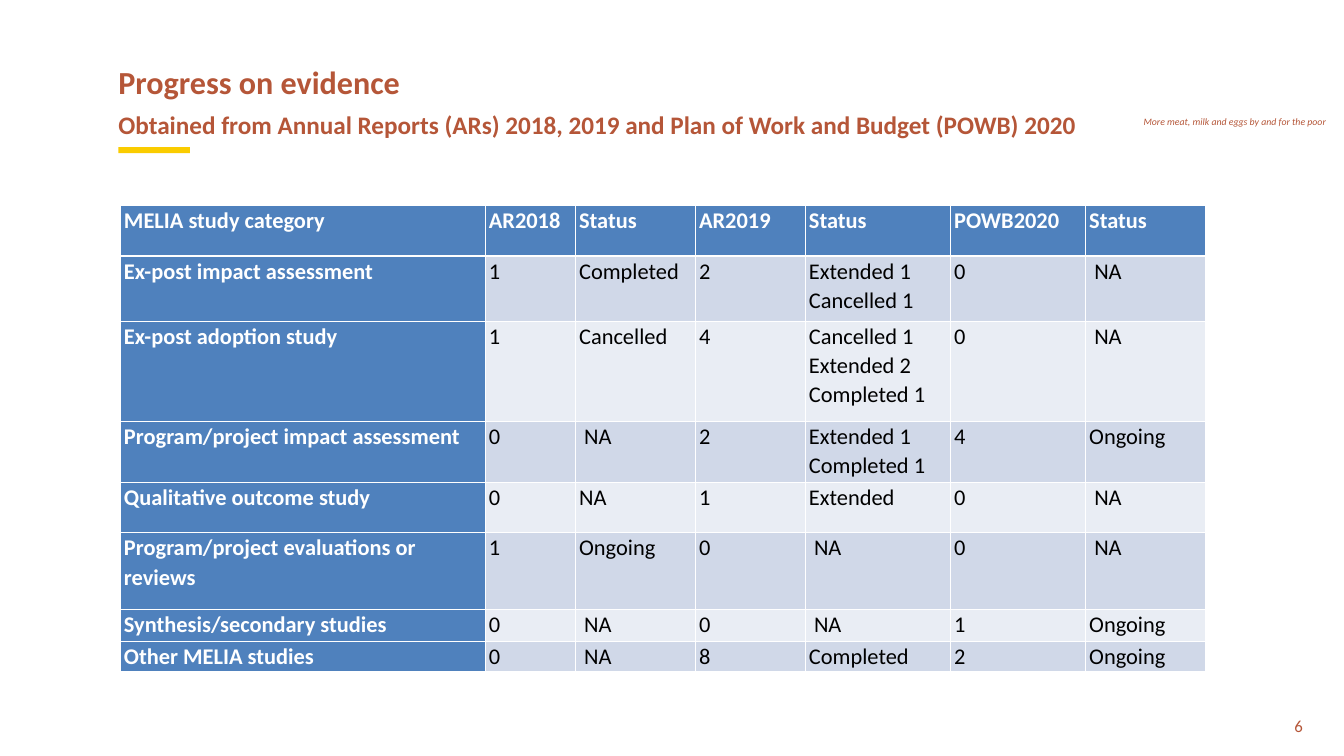
from lxml import etree
from pptx import Presentation
from pptx.dml.color import RGBColor
from pptx.enum.shapes import MSO_SHAPE
from pptx.enum.text import PP_ALIGN
from pptx.oxml.ns import qn
from pptx.util import Pt

RECTANGLE = MSO_SHAPE.RECTANGLE
LEFT, RIGHT = PP_ALIGN.LEFT, PP_ALIGN.RIGHT

THEME = {
    "font": "Calibri",
    "rust": "B55638", "yellow": "FACC00", "blue": "4F81BD",
    "white": "FFFFFF", "black": "000000",
    "bands": ("D0D8E8", "E9EDF4"),
    "title": 45.9, "subtitle": 36, "table": 32, "number": 24, "tagline": 14,
}

# text, (left, top, width, height), size, font style, alignment, line spacing, wrap
TEXTS = [
    ("6", (1818, 1019.5, 50.4, 36), "number", {}, RIGHT, 1, True),
    ("More meat, milk and eggs by and for the poor",
     (1626.5, 162, 277.2, 24.5), "tagline", {"italic": True}, LEFT, 1, False),
    ("Progress on evidence",
     (162, 95.8, 424, 69.8), "title", {"bold": True}, LEFT, 0.8, True),
    ("Obtained from Annual Reports (ARs) 2018, 2019 and Plan of Work and Budget (POWB) 2020",
     (162, 152.6, 1418.4, 51.1), "subtitle", {"bold": True}, LEFT, 1, False),
]
ACCENT_BAR = (169.2, 210.2, 102.2, 8.6)

TABLE_ORIGIN = (172.1, 293.8)
COLUMN_WIDTHS = [521.3, 128.9, 171.4, 157, 207.4, 193, 171.4]
ROW_HEIGHTS = [72, 92.9, 142.6, 87.8, 72, 108.7, 46.1, 43.2]
STUDIES = [
    ["MELIA study category", "AR2018", "Status", "AR2019", "Status", "POWB2020", "Status"],
    ["Ex-post impact assessment", "1", "Completed", "2",
     "Extended 1\nCancelled 1", "0", " NA"],
    ["Ex-post adoption study", "1", "Cancelled", "4",
     "Cancelled 1\nExtended 2\nCompleted 1", "0", " NA"],
    ["Program/project impact assessment", "0", " NA", "2",
     "Extended 1\nCompleted 1", "4", "Ongoing"],
    ["Qualitative outcome study", "0", "NA ", "1", "Extended", "0", " NA"],
    ["Program/project evaluations or reviews", "1", "Ongoing", "0", " NA", "0", " NA"],
    ["Synthesis/secondary studies", "0", " NA", "0", " NA", "1", "Ongoing"],
    ["Other MELIA studies", "0", " NA", "8", "Completed", "2", "Ongoing"],
]
CELL_MARGINS = {"margin_left": Pt(5), "margin_right": Pt(5),
                "margin_top": Pt(0), "margin_bottom": Pt(0)}


def points(values):
    return [Pt(value) for value in values]


def paint(target, color):
    target.fill.solid()
    target.fill.fore_color.rgb = RGBColor.from_string(color)


def write(frame, text, size, color, style, align=LEFT, spacing=1.0):
    """Fill a text frame, one paragraph for each line of text."""
    frame.text = text
    font_format = {"name": THEME["font"], "size": Pt(THEME[size]), **style}
    for para in frame.paragraphs:
        para.alignment = align
        para.line_spacing = spacing
        for span in para.runs:
            for name, value in font_format.items():
                setattr(span.font, name, value)
            span.font.color.rgb = RGBColor.from_string(color)


def set_borders(cell, widths):
    """Put white lines on the left, right, top and bottom, ahead of the fill."""
    properties = cell._tc.get_or_add_tcPr()
    for index, (side, width) in enumerate(widths.items()):
        line = etree.Element(qn(f"a:ln{side}"), w=str(Pt(width)))
        fill = etree.SubElement(line, qn("a:solidFill"))
        etree.SubElement(fill, qn("a:srgbClr"), val=THEME["white"])
        properties.insert(index, line)


def add_texts(page):
    for text, place, size, style, align, spacing, wrap in TEXTS:
        box = page.shapes.add_textbox(*points(place))
        box.text_frame.word_wrap = wrap
        write(box.text_frame, text, size, THEME["rust"], style, align, spacing)


def add_accent_bar(page):
    bar = page.shapes.add_shape(RECTANGLE, *points(ACCENT_BAR))
    bar.shadow.inherit = False
    paint(bar, THEME["yellow"])
    bar.line.fill.background()


def add_study_table(page):
    size = (sum(COLUMN_WIDTHS), sum(ROW_HEIGHTS))
    table = page.shapes.add_table(len(ROW_HEIGHTS), len(COLUMN_WIDTHS),
                                  *points(TABLE_ORIGIN + size)).table
    table.first_col = True
    for column, width in zip(table.columns, COLUMN_WIDTHS):
        column.width = Pt(width)
    for row, height in zip(table.rows, ROW_HEIGHTS):
        row.height = Pt(height)

    for r, study in enumerate(STUDIES):
        for c, text in enumerate(study):
            cell = table.cell(r, c)
            heading = r == 0 or c == 0
            for name, value in CELL_MARGINS.items():
                setattr(cell, name, value)
            paint(cell, THEME["blue"] if heading else THEME["bands"][(r - 1) % 2])
            set_borders(cell, {"L": 1, "R": 1, "T": 3 if r == 1 else 1,
                               "B": 3 if r == 0 else 1})
            write(cell.text_frame, text, "table",
                  THEME["white"] if heading else THEME["black"],
                  {"bold": heading}, spacing=1.07)


def main():
    deck = Presentation()
    deck.slide_width, deck.slide_height = Pt(1920), Pt(1080)
    page = deck.slides.add_slide(deck.slide_layouts[6])
    add_texts(page)
    add_accent_bar(page)
    add_study_table(page)
    deck.save("out.pptx")


if __name__ == "__main__":
    main()
